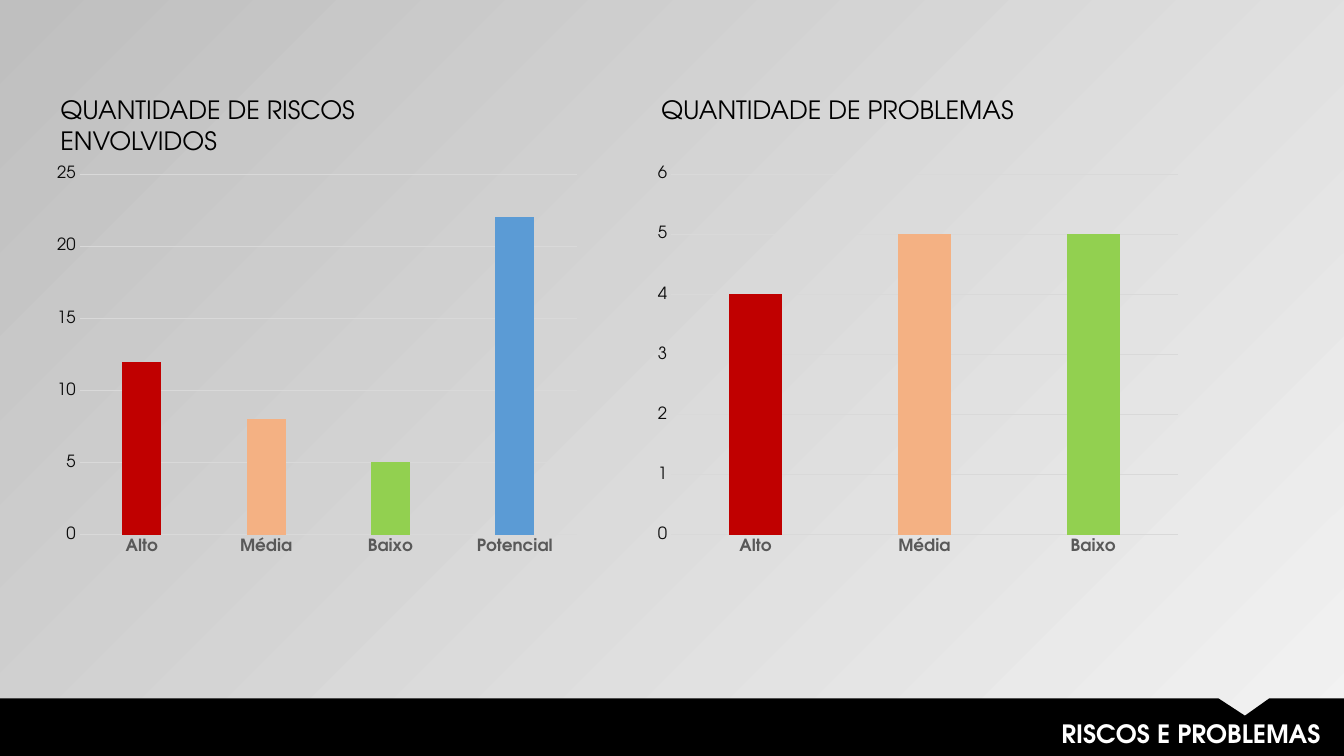
from dataclasses import dataclass

from pptx import Presentation
from pptx.chart.data import CategoryChartData
from pptx.dml.color import RGBColor
from pptx.enum.chart import XL_CHART_TYPE, XL_TICK_MARK
from pptx.enum.text import MSO_ANCHOR, MSO_AUTO_SIZE, PP_ALIGN
from pptx.util import Inches, Pt

COLUMN = XL_CHART_TYPE.COLUMN_CLUSTERED
NO_TICK = XL_TICK_MARK.NONE
TOP = MSO_ANCHOR.TOP
GROW = MSO_AUTO_SIZE.SHAPE_TO_FIT_TEXT
LEFT, RIGHT = PP_ALIGN.LEFT, PP_ALIGN.RIGHT
COMPARISON_LAYOUT = 4


@dataclass(frozen=True)
class Theme:
    font: str = "TeX Gyre Adventor"
    heading_size: int = 18
    axis_size: int = 12
    chart_size: int = 10
    black: str = "000000"
    white: str = "FFFFFF"
    value_text: str = "0D0D0D"
    category_text: str = "595959"
    rule: str = "D9D9D9"
    rule_width: float = 0.75
    levels: tuple[str, ...] = ("C00000", "F4B183", "92D050")
    series: str = "5B9BD5"
    background: tuple[str, str] = ("F2F2F2", "BFBFBF")


@dataclass(frozen=True)
class Panel:
    heading: str
    placeholder: int
    categories: tuple[str, ...]
    values: tuple[int, ...]
    top_value: int
    step: int


THEME = Theme()
WIDTH, HEIGHT = Inches(13.333), Inches(7.5)
PANEL_STEP = 44.7
PANELS = (
    Panel("QUANTIDADE DE RISCOS ENVOLVIDOS", 1,
          ("Alto", "Média", "Baixo", "Potencial"), (12, 8, 5, 22), 25, 5),
    Panel("QUANTIDADE DE PROBLEMAS", 3,
          ("Alto", "Média", "Baixo"), (4, 5, 5), 6, 1),
)
BAR_OUTLINE = ((0, 92.4), (90.68, 92.4), (92.63, 94.67), (94.43, 92.4),
               (100, 92.4), (100, 100), (0, 100))


def x(percent: float) -> int:
    return round(WIDTH * percent / 100)


def y(percent: float) -> int:
    return round(HEIGHT * percent / 100)


def box(left: float, top: float, width: float, height: float) -> tuple[int, ...]:
    return x(left), y(top), x(width), y(height)


def rgb(color: str) -> RGBColor:
    return RGBColor.from_string(color)


def style_font(font, size: int, color: str, bold: bool = False) -> None:
    font.name = THEME.font
    font.size = Pt(size)
    font.bold = bold
    font.color.rgb = rgb(color)


def put_text(sp, text: str, *, at: tuple[int, ...], color: str,
             bold: bool = False, align=LEFT) -> None:
    sp.left, sp.top, sp.width, sp.height = at
    tf = sp.text_frame
    tf.word_wrap = True
    tf.auto_size = GROW
    tf.vertical_anchor = TOP
    p = tf.paragraphs[0]
    p.alignment = align
    p.line_spacing = 1.0
    p.space_before = Pt(0)
    r = p.add_run()
    r.text = text
    style_font(r.font, THEME.heading_size, color, bold)


def style_rule(line) -> None:
    line.color.rgb = rgb(THEME.rule)
    line.width = Pt(THEME.rule_width)


def style_axis(axis, color: str, bold: bool = False) -> None:
    axis.major_tick_mark = NO_TICK
    axis.minor_tick_mark = NO_TICK
    style_font(axis.tick_labels.font, THEME.axis_size, color, bold)


def draw_chart(s, panel: Panel, at: tuple[int, ...]) -> None:
    data = CategoryChartData()
    data.categories = panel.categories
    data.add_series("Series 1", panel.values)
    chart = s.shapes.add_chart(COLUMN, *at, data).chart
    chart.has_legend = False
    chart.has_title = False
    style_font(chart.font, THEME.chart_size, THEME.black)

    style_axis(chart.category_axis, THEME.category_text, bold=True)
    style_rule(chart.category_axis.format.line)
    axis = chart.value_axis
    style_axis(axis, THEME.value_text)
    axis.format.line.fill.background()
    axis.minimum_scale, axis.maximum_scale = 0, panel.top_value
    axis.major_unit = panel.step
    style_rule(axis.major_gridlines.format.line)

    plot = chart.plots[0]
    plot.vary_by_categories = False
    plot.gap_width, plot.overlap = 219, -5
    series = plot.series[0]
    series.format.fill.solid()
    series.format.fill.fore_color.rgb = rgb(THEME.series)
    for i, color in enumerate(THEME.levels):
        fill = series.points[i].format.fill
        fill.solid()
        fill.fore_color.rgb = rgb(color)


def draw_background(s) -> None:
    fill = s.background.fill
    fill.gradient()
    fill.gradient_angle = 135
    for stop, color in zip(fill.gradient_stops, THEME.background):
        stop.color.rgb = rgb(color)


def draw_bar(s) -> None:
    points = [(x(px), y(py)) for px, py in BAR_OUTLINE]
    builder = s.shapes.build_freeform(*points[0])
    builder.add_line_segments(points[1:], close=True)
    bar = builder.convert_to_shape()
    bar.shadow.inherit = False
    bar.fill.solid()
    bar.fill.fore_color.rgb = rgb(THEME.black)
    bar.line.fill.background()


def main() -> None:
    prs = Presentation()
    prs.slide_width, prs.slide_height = WIDTH, HEIGHT
    s = prs.slides.add_slide(prs.slide_layouts[COMPARISON_LAYOUT])
    draw_background(s)
    holders = {sp.placeholder_format.idx: sp for sp in s.placeholders}
    tree = s.shapes.title.element.getparent()

    for i, panel in enumerate(PANELS):
        shift = i * PANEL_STEP
        draw_chart(s, panel, box(3.45 + shift, 20.93, 40.28, 53.47))
        heading = holders.pop(panel.placeholder)
        put_text(heading, panel.heading, color=THEME.black,
                 at=box(3.75 + shift, 11.87, 33.3, 5.33))
        tree.append(heading.element)

    draw_bar(s)
    title = holders.pop(0)
    put_text(title, "RISCOS E PROBLEMAS", color=THEME.white, bold=True,
             align=RIGHT, at=box(31.05, 94.4, 67.95, 5.33))
    tree.append(title.element)
    for sp in holders.values():
        tree.remove(sp.element)
    prs.save("out.pptx")


if __name__ == "__main__":
    main()
